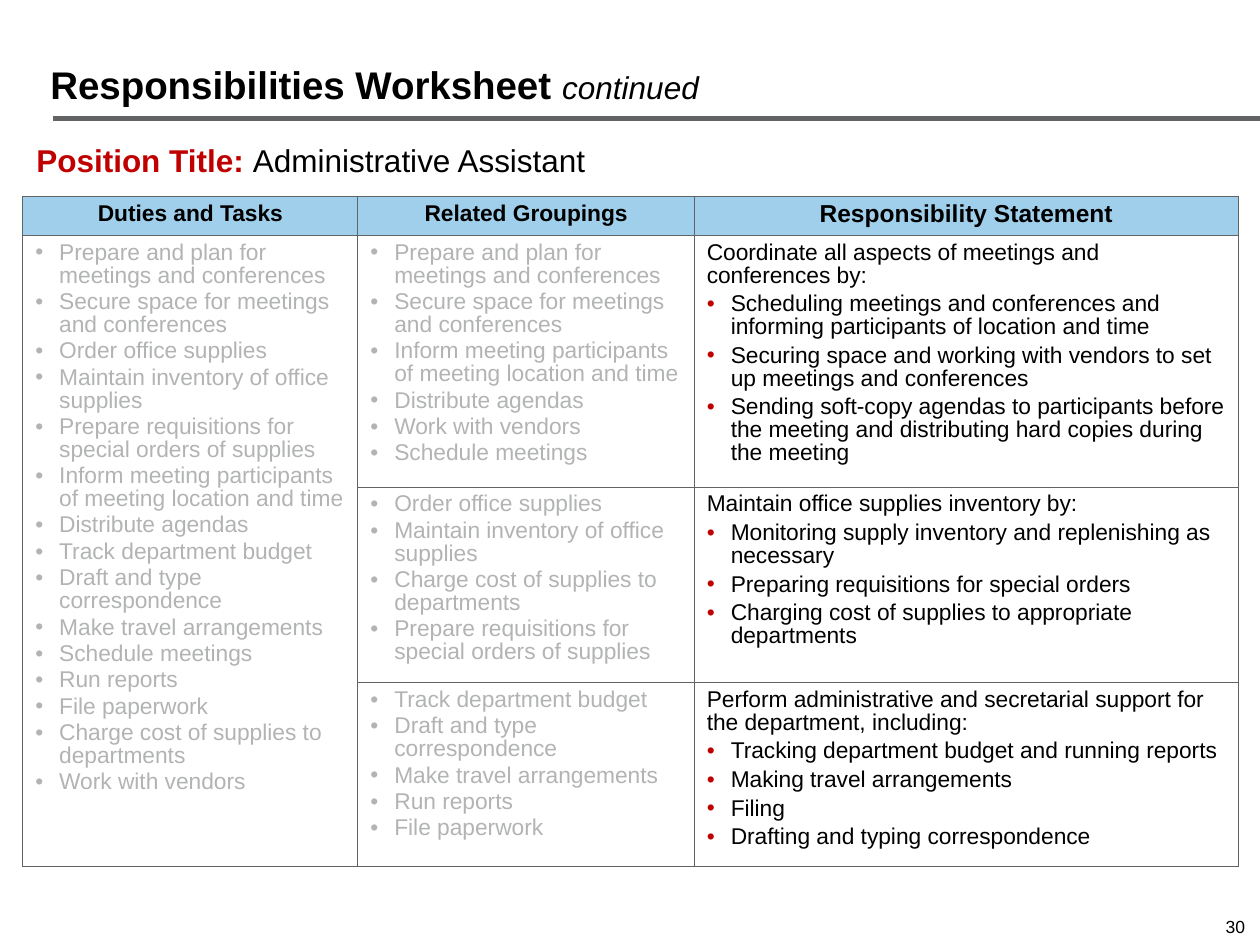
from lxml import etree
from pptx import Presentation, util as u
from pptx.dml.color import RGBColor
from pptx.enum import shapes, text
from pptx.oxml.ns import qn

BLACK = RGBColor(0, 0, 0)
WHITE = RGBColor(255, 255, 255)
RED = RGBColor(0xC0, 0, 0)
PALE = RGBColor(0xB2, 0xB4, 0xB3)
GRAY = RGBColor(0x61, 0x63, 0x65)
BLUE = RGBColor(0xA0, 0xCF, 0xEB)

COLS = 2.66, 2.67, 4.32
ROWS = 0.3, 1.87, 1.49, 1.37
HEADS = ("Duties and Tasks", 13), ("Related Groupings", 13), ("Responsibility Statement", 14)
DUTIES = [
    "Prepare and plan for meetings and conferences",
    "Secure space for meetings and conferences",
    "Order office supplies",
    "Maintain inventory of office supplies",
    "Prepare requisitions for special orders of supplies",
    "Inform meeting participants of meeting location and time",
    "Distribute agendas",
    "Track department budget",
    "Draft and type correspondence",
    "Make travel arrangements",
    "Schedule meetings",
    "Run reports",
    "File paperwork",
    "Charge cost of supplies to departments",
    "Work with vendors",
]
GROUPS = (0, 1, 5, 6, 14, 10), (2, 3, 13, 4), (7, 8, 9, 11, 12)
DEEDS = [
    ("Coordinate all aspects of meetings and conferences by:",
     "Scheduling meetings and conferences and informing participants of location and time",
     "Securing space and working with vendors to set up meetings and conferences",
     "Sending soft-copy agendas to participants before the meeting and "
     "distributing hard copies during the meeting"),
    ("Maintain office supplies inventory by:",
     "Monitoring supply inventory and replenishing as necessary",
     "Preparing requisitions for special orders",
     "Charging cost of supplies to appropriate departments"),
    ("Perform administrative and secretarial support for the department, including:",
     "Tracking department budget and running reports",
     "Making travel arrangements",
     "Filing",
     "Drafting and typing correspondence"),
]


def apply(item, vals):
    """Set each named value on an item."""
    for key, val in vals.items():
        setattr(item, key, val)


def add_run(para, words, size, color=BLACK, **more):
    """Add one formatted run to a paragraph."""
    run = para.add_run()
    run.text = words
    apply(run.font, {"name": "Arial", "size": u.Pt(size), "bold": False, **more})
    run.font.color.rgb = color


def add_dot(para, color):
    """Give a paragraph a hanging bullet in a colour."""
    props = para._p.get_or_add_pPr()
    inset = u.Inches(0.19)
    props.set("marL", str(inset))
    props.set("indent", str(-inset))
    tint = etree.SubElement(props, qn("a:buClr"))
    etree.SubElement(tint, qn("a:srgbClr"), val=str(color))
    etree.SubElement(props, qn("a:buFont"), typeface="Arial")
    etree.SubElement(props, qn("a:buChar"), char="•")


def fill_list(cell, lines, color, dot, gap, lead=0):
    """Write lines in a cell, with bullets after the lead lines."""
    frame = cell.text_frame
    for i, line in enumerate(lines):
        para = frame.add_paragraph() if i else frame.paragraphs[0]
        if i >= lead:
            add_dot(para, dot)
        apply(para, {"line_spacing": 0.9, "space_before": u.Pt(gap if i else 0)})
        add_run(para, line, 13, color)


def edge(cell):
    """Draw thin lines on all sides of a cell."""
    props = cell._tc.get_or_add_tcPr()
    for side in "LRTB":
        line = etree.SubElement(props, qn("a:ln" + side), w=str(u.Pt(0.5)))
        paint = etree.SubElement(line, qn("a:solidFill"))
        etree.SubElement(paint, qn("a:srgbClr"), val=str(GRAY))


def add_grid(slide):
    """Add the worksheet table."""
    box = map(u.Inches, (0.18, 1.56, sum(COLS), sum(ROWS)))
    grid = slide.shapes.add_table(len(ROWS), len(COLS), *box).table
    apply(grid, {"first_row": False, "horz_banding": False})
    for col, wide in zip(grid.columns, COLS):
        col.width = u.Inches(wide)
    for r, (row, high) in enumerate(zip(grid.rows, ROWS)):
        row.height = u.Inches(high)
        for cell in row.cells:
            edge(cell)
            cell.fill.solid()
            cell.fill.fore_color.rgb = WHITE if r else BLUE
    grid.cell(1, 0).merge(grid.cell(3, 0))
    for c, (head, size) in enumerate(HEADS):
        para = grid.cell(0, c).text_frame.paragraphs[0]
        apply(para, {"alignment": text.PP_ALIGN.CENTER, "line_spacing": 0.9})
        add_run(para, head, size, bold=True)
    fill_list(grid.cell(1, 0), DUTIES, PALE, PALE, 2)
    for r, (group, deed) in enumerate(zip(GROUPS, DEEDS), 1):
        fill_list(grid.cell(r, 1), [DUTIES[i] for i in group], PALE, PALE, 2)
        fill_list(grid.cell(r, 2), deed, BLACK, RED, 3.25, lead=1)


def add_title(slide):
    """Format the title and draw the rule below it."""
    title = slide.shapes.title
    box = dict(zip(("left", "top", "width", "height"), map(u.Inches, (0.3, 0.08, 9.53, 0.83))))
    apply(title, box)
    apply(title.text_frame, {"vertical_anchor": text.MSO_ANCHOR.BOTTOM, "word_wrap": True,
                             "auto_size": text.MSO_AUTO_SIZE.NONE})
    para = title.text_frame.paragraphs[0]
    apply(para, {"alignment": text.PP_ALIGN.LEFT, "line_spacing": 0.9, "space_before": u.Pt(0)})
    add_run(para, "Responsibilities Worksheet ", 22, bold=True)
    add_run(para, "continued", 18, italic=True)
    ends = map(u.Inches, (0.42, 0.94, 10, 0.94))
    rule = slide.shapes.add_connector(shapes.MSO_CONNECTOR.STRAIGHT, *ends)
    rule.line.color.rgb = GRAY
    rule.line.width = u.Pt(3)
    etree.SubElement(rule._element.spPr, qn("a:effectLst"))


def add_text(slide, box, runs, **look):
    """Add a text box with one paragraph of runs."""
    frame = slide.shapes.add_textbox(*map(u.Inches, box)).text_frame
    apply(frame, {"word_wrap": True, "vertical_anchor": text.MSO_ANCHOR.MIDDLE})
    para = frame.paragraphs[0]
    apply(para, look)
    for words, size, color, bold in runs:
        add_run(para, words, size, color, bold=bold)


def main():
    """Build the slide and save it."""
    deck = Presentation()
    apply(deck, {"slide_width": u.Inches(10), "slide_height": u.Inches(7.5)})
    slide = deck.slides.add_slide(deck.slide_layouts[5])
    add_title(slide)
    add_text(slide, (0.19, 1.08, 5.31, 0.38),
             [("Position Title: ", 18, RED, True), ("Administrative Assistant", 18, BLACK, False)])
    add_grid(slide)
    add_text(slide, (9.38, 7.24, 0.6, 0.25), [("30", 10, BLACK, False)],
             alignment=text.PP_ALIGN.RIGHT, line_spacing=0.9)
    deck.save("out.pptx")


if __name__ == "__main__":
    main()
